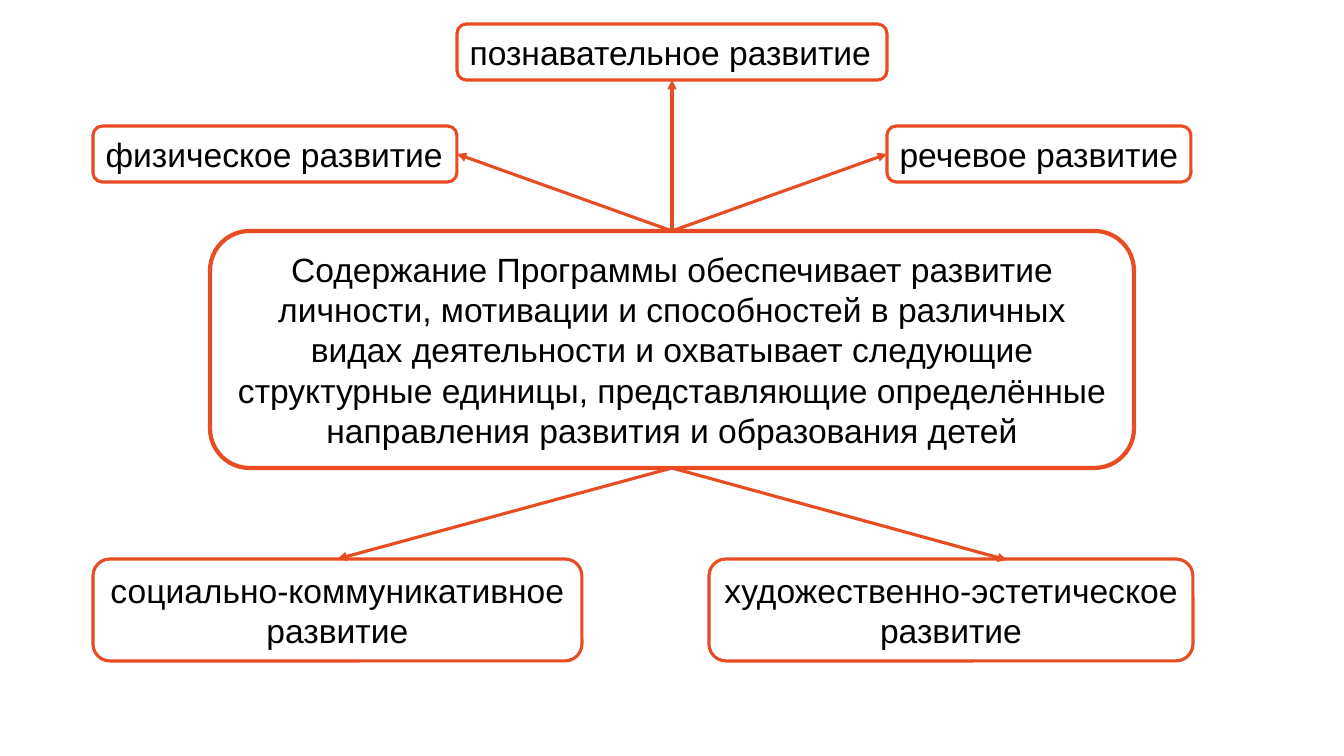
import pptx
import pptx.util
import pptx.dml.color
import pptx.enum.shapes
import pptx.enum.text
import pptx.oxml.ns
from lxml import etree

COLORS = {"box": "FFFFFF", "line": "E84C22", "text": "000000"}
FONT, TEXT_PT = "Arial", 24
CENTER_LINE_PT, LINE_PT = 3, 2.25
SLIDE_W, SLIDE_H = 1344, 756  # px
PX = 914400 / 100.8
TOP, LEFT, BOTTOM, RIGHT = range(4)  # connection sites of a rectangle

CENTER = (
    "Содержание Программы обеспечивает развитие личности, мотивации и "
    "способностей в различных видах деятельности и охватывает следующие "
    "структурные единицы, представляющие определённые направления развития "
    "и образования детей",
    (210, 231, 924, 237),
)

# text, box (left, top, width, height), wraps, site on the center,
# arrow target: a site of the box or a point
AREAS = [
    ("физическое развитие", (93, 126, 364, 56), False, TOP, RIGHT),
    ("социально-коммуникативное развитие", (93, 559, 489, 102), True, BOTTOM, TOP),
    ("познавательное развитие", (457, 24, 430, 56), False, TOP, BOTTOM),
    ("речевое развитие", (887, 126, 304, 56), False, TOP, LEFT),
    ("художественно-эстетическое развитие", (709, 559, 484, 102), True, BOTTOM, (1007, 560)),
]


def emu(px):
    return pptx.util.Emu(round(px * PX))


def rgb(name):
    return pptx.dml.color.RGBColor.from_string(COLORS[name])


def style_line(line, width):
    line.color.rgb = rgb("line")
    line.width = pptx.util.Pt(width)


def add_box(slide, text, box, width, wraps=True):
    sp = slide.shapes.add_shape(
        pptx.enum.shapes.MSO_SHAPE.ROUNDED_RECTANGLE, *map(emu, box))
    sp.shadow.inherit = False
    sp.fill.solid()
    sp.fill.fore_color.rgb = rgb("box")
    style_line(sp.line, width)
    tf = sp.text_frame
    tf.text = text
    tf.word_wrap = wraps
    tf.auto_size = pptx.enum.text.MSO_AUTO_SIZE.SHAPE_TO_FIT_TEXT
    p = tf.paragraphs[0]
    align = pptx.enum.text.PP_ALIGN
    p.alignment = align.CENTER if wraps else align.LEFT
    font = p.runs[0].font
    font.name = FONT
    font.size = pptx.util.Pt(TEXT_PT)
    font.color.rgb = rgb("text")
    return sp


def add_arrow(slide, start, start_site, end, target):
    """Join two boxes; target is a site of the end box or a point in px."""
    point = target if isinstance(target, tuple) else (0, 0)
    cx = slide.shapes.add_connector(
        pptx.enum.shapes.MSO_CONNECTOR.STRAIGHT, 0, 0, *map(emu, point))
    cx.begin_connect(start, start_site)
    if not isinstance(target, tuple):
        cx.end_connect(end, target)
    style_line(cx.line, LINE_PT)
    ln = cx.line._get_or_add_ln()
    etree.SubElement(ln, pptx.oxml.ns.qn("a:tailEnd"), type="triangle")
    etree.SubElement(cx._element.spPr, pptx.oxml.ns.qn("a:effectLst"))


def main():
    prs = pptx.Presentation()
    prs.slide_width, prs.slide_height = emu(SLIDE_W), emu(SLIDE_H)
    slide = prs.slides.add_slide(prs.slide_layouts.get_by_name("Blank"))
    center = add_box(slide, *CENTER, CENTER_LINE_PT)
    boxes = [add_box(slide, text, box, LINE_PT, wraps)
             for text, box, wraps, _, _ in AREAS]
    for sp, (_, _, _, site, target) in zip(boxes, AREAS):
        add_arrow(slide, center, site, sp, target)
    prs.save("out.pptx")


if __name__ == "__main__":
    main()
